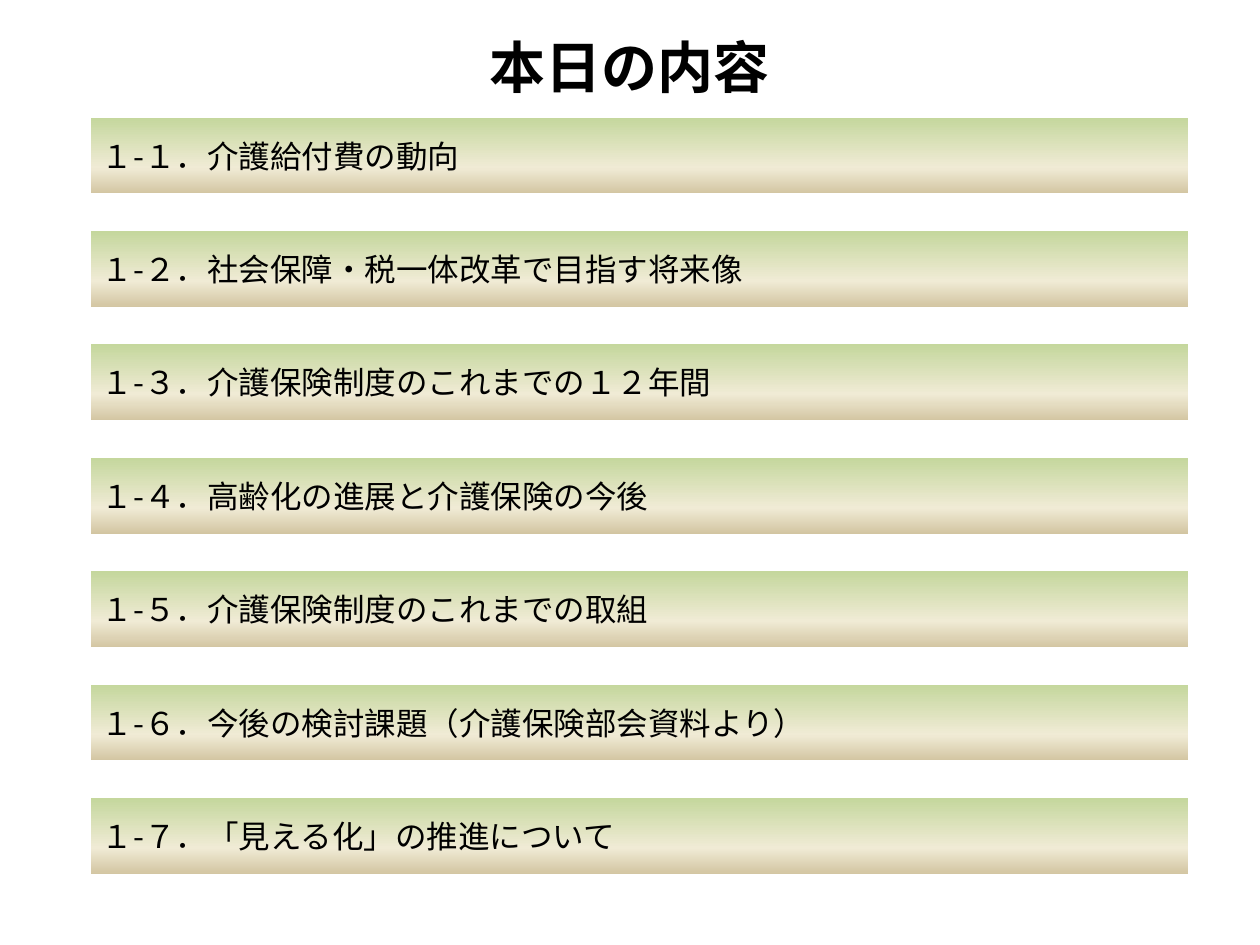
from copy import deepcopy

from lxml import etree
from pptx import Presentation
from pptx.dml.color import RGBColor
from pptx.enum.shapes import MSO_SHAPE
from pptx.enum.text import MSO_ANCHOR, PP_ALIGN
from pptx.oxml.ns import qn
from pptx.util import Inches, Pt

RECT = MSO_SHAPE.RECTANGLE
MIDDLE = MSO_ANCHOR.MIDDLE
LEFT, CENTER = PP_ALIGN.LEFT, PP_ALIGN.CENTER

BLACK = RGBColor(0x00, 0x00, 0x00)
WHITE = RGBColor(0xFF, 0xFF, 0xFF)
GREEN = RGBColor(0xC3, 0xD6, 0x9B)
CREAM = RGBColor(0xF0, 0xEB, 0xD5)
TAN = RGBColor(0xD1, 0xC3, 0x9F)
STOPS = [(0, GREEN), (0.65, CREAM), (1, TAN)]
GOTHIC = "Noto Sans CJK JP"

TOPICS = [
    "１-１．介護給付費の動向",
    "１-２．社会保障・税一体改革で目指す将来像",
    "１-３．介護保険制度のこれまでの１２年間",
    "１-４．高齢化の進展と介護保険の今後",
    "１-５．介護保険制度のこれまでの取組",
    "１-６．今後の検討課題（介護保険部会資料より）",
    "１-７．「見える化」の推進について",
]


def write(shape, text, size, font, align, bold=False):
    frame = shape.text_frame
    frame.word_wrap = True
    frame.vertical_anchor = MIDDLE
    para = frame.paragraphs[0]
    para.alignment = align
    run = para.add_run()
    run.text = text
    run.font.size = Pt(size)
    run.font.name = font
    run.font.bold = bold
    run.font.color.rgb = BLACK
    # Japanese glyphs take the East Asian font
    east = etree.SubElement(run.font._element, qn("a:ea"))
    east.set("typeface", GOTHIC)


def shade(fill):
    fill.gradient()
    fill.gradient_angle = 270
    # The default gradient has two stops; add a third
    last = fill.gradient_stops[1]._gs
    last.addnext(deepcopy(last))
    for stop, (place, color) in zip(fill.gradient_stops, STOPS):
        stop.position = place
        stop.color.rgb = color


prs = Presentation()
prs.slide_width = Inches(10)
prs.slide_height = Inches(7.5)
slide = prs.slides.add_slide(prs.slide_layouts[6])

# Title
title = slide.shapes.add_textbox(Inches(0), Inches(0.21), Inches(10), Inches(0.63))
write(title, "本日の内容", 32, "Calibri", CENTER, bold=True)

# Topic bars at an equal pitch
for i, topic in enumerate(TOPICS):
    top = Inches(0.92 + 0.9 * i)
    bar = slide.shapes.add_shape(RECT, Inches(0.71), top, Inches(8.73), Inches(0.63))
    bar.shadow.inherit = False
    shade(bar.fill)
    bar.line.color.rgb = WHITE
    bar.line.width = Pt(2)
    write(bar, topic, 18, GOTHIC, LEFT)

prs.save("out.pptx")
